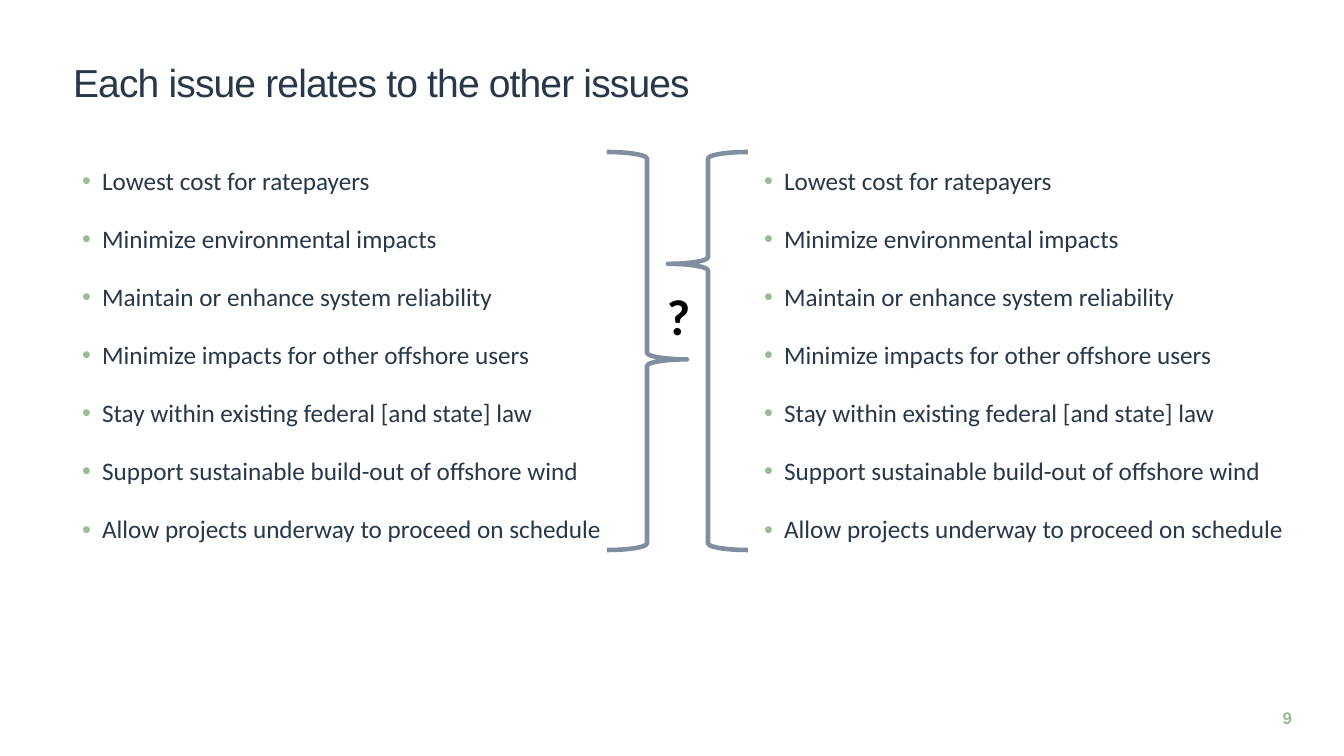
"""Build a slide that sets a list of issues against itself between two braces."""
from dataclasses import dataclass

from lxml import etree
from pptx import Presentation
from pptx.dml.color import RGBColor
from pptx.enum.shapes import MSO_SHAPE
from pptx.enum.text import MSO_ANCHOR, MSO_AUTO_SIZE, PP_ALIGN
from pptx.oxml.ns import qn
from pptx.util import Pt

LEFT_BRACE = MSO_SHAPE.LEFT_BRACE
TOP, MIDDLE = MSO_ANCHOR.TOP, MSO_ANCHOR.MIDDLE
LEFT, RIGHT = PP_ALIGN.LEFT, PP_ALIGN.RIGHT
NO_AUTOFIT = MSO_AUTO_SIZE.NONE

TITLE = "Each issue relates to the other issues"
ISSUES = [
    "Lowest cost for ratepayers",
    "Minimize environmental impacts",
    "Maintain or enhance system reliability",
    "Minimize impacts for other offshore users",
    "Stay within existing federal [and state] law",
    "Support sustainable build-out of offshore wind",
    "Allow projects underway to proceed on schedule",
]
QUESTION = "?"
PAGE_NUMBER = "9"

SLIDE_SIZE = (1344, 756)
TITLE_BOX = (63, 59, 1088, 80)
LIST_LEFTS = (72, 754)
LIST_TOP, LIST_WIDTH, LIST_HEIGHT = 164, 591, 556
LIST_INDENT = 20
BRACE_TOP, BRACE_WIDTH, BRACE_HEIGHT = 152, 80, 398
BRACE_CURVE = 0.083
BRACES = [
    {"left": 668, "tip": 0.281, "rotation": 0},
    {"left": 607, "tip": 0.479, "rotation": 180},
]
QUESTION_BOX = (657, 280, 34, 72)
NUMBER_BOX = (1134, 698, 168, 40)


@dataclass(frozen=True)
class Theme:
    ink: str = "29374A"
    accent: str = "9ABB95"
    brace: str = "818E9F"
    black: str = "000000"
    heading_font: str = "Arial"
    body_font: str = "Calibri"
    title_size: float = 27.9
    body_size: int = 18
    question_size: int = 36
    number_size: int = 12
    brace_weight: float = 3.25


THEME = Theme()


def px(length):
    return round(length * 914400 / 100.8)


def place(shape, left, top, width, height):
    shape.left, shape.top = px(left), px(top)
    shape.width, shape.height = px(width), px(height)


def add_bullet(paragraph):
    properties = paragraph._p.get_or_add_pPr()
    properties.set("marL", str(px(LIST_INDENT)))
    properties.set("indent", str(-px(LIST_INDENT)))
    color = etree.SubElement(properties, qn("a:buClr"))
    etree.SubElement(color, qn("a:srgbClr"), val=THEME.accent)
    etree.SubElement(properties, qn("a:buChar"), char="•")


def write_text(shape, lines, *, font, size, color, bold=False, align=LEFT,
               anchor=TOP, wrap=True, line_spacing=1.0, before=0, after=0,
               tracking=0, bullets=False):
    frame = shape.text_frame
    frame.word_wrap = wrap
    frame.auto_size = NO_AUTOFIT
    frame.vertical_anchor = anchor
    for index, line in enumerate(lines):
        paragraph = frame.add_paragraph() if index else frame.paragraphs[0]
        if bullets:
            add_bullet(paragraph)
        paragraph.alignment = align
        paragraph.line_spacing = line_spacing
        paragraph.space_before = Pt(before if index else 0)
        paragraph.space_after = Pt(after)
        run = paragraph.add_run()
        run.text = line
        run.font.name, run.font.size, run.font.bold = font, Pt(size), bold
        run.font.color.rgb = RGBColor.from_string(color)
        if tracking:
            run._r.get_or_add_rPr().set("spc", str(round(tracking * 100)))


def add_brace(slide, left, tip, rotation):
    brace = slide.shapes.add_shape(
        LEFT_BRACE, px(left), px(BRACE_TOP), px(BRACE_WIDTH), px(BRACE_HEIGHT))
    brace.adjustments[0], brace.adjustments[1] = BRACE_CURVE, tip
    brace.rotation = rotation
    brace.shadow.inherit = False
    brace.fill.background()
    brace.line.color.rgb = RGBColor.from_string(THEME.brace)
    brace.line.width = Pt(THEME.brace_weight)


def main():
    presentation = Presentation()
    presentation.slide_width, presentation.slide_height = map(px, SLIDE_SIZE)
    two_content = presentation.slide_layouts[3]
    slide = presentation.slides.add_slide(two_content)

    title, *lists = slide.placeholders
    place(title, *TITLE_BOX)
    write_text(title, [TITLE], font=THEME.heading_font, size=THEME.title_size,
               color=THEME.ink, line_spacing=0.9, tracking=-0.6)

    for issue_list, left in zip(lists, LIST_LEFTS):
        place(issue_list, left, LIST_TOP, LIST_WIDTH, LIST_HEIGHT)
        write_text(issue_list, ISSUES, font=THEME.body_font, size=THEME.body_size,
                   color=THEME.ink, line_spacing=0.9, before=12, after=10,
                   bullets=True)

    for brace in BRACES:
        add_brace(slide, **brace)

    question = slide.shapes.add_textbox(*map(px, QUESTION_BOX))
    write_text(question, [QUESTION], font=THEME.body_font, bold=True,
               size=THEME.question_size, color=THEME.black, wrap=False)

    number = slide.shapes.add_textbox(*map(px, NUMBER_BOX))
    write_text(number, [PAGE_NUMBER], font=THEME.heading_font, bold=True,
               size=THEME.number_size, color=THEME.accent, align=RIGHT,
               anchor=MIDDLE)

    presentation.save("out.pptx")


if __name__ == "__main__":
    main()
